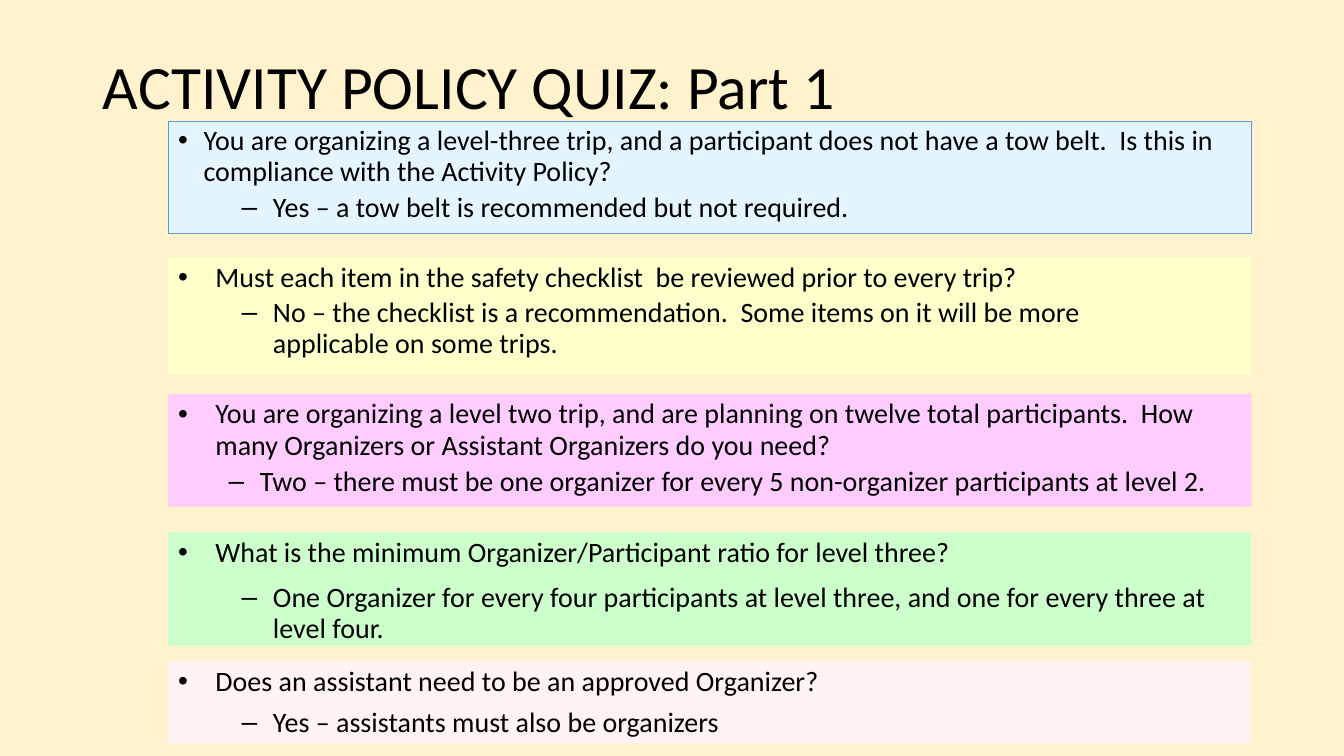
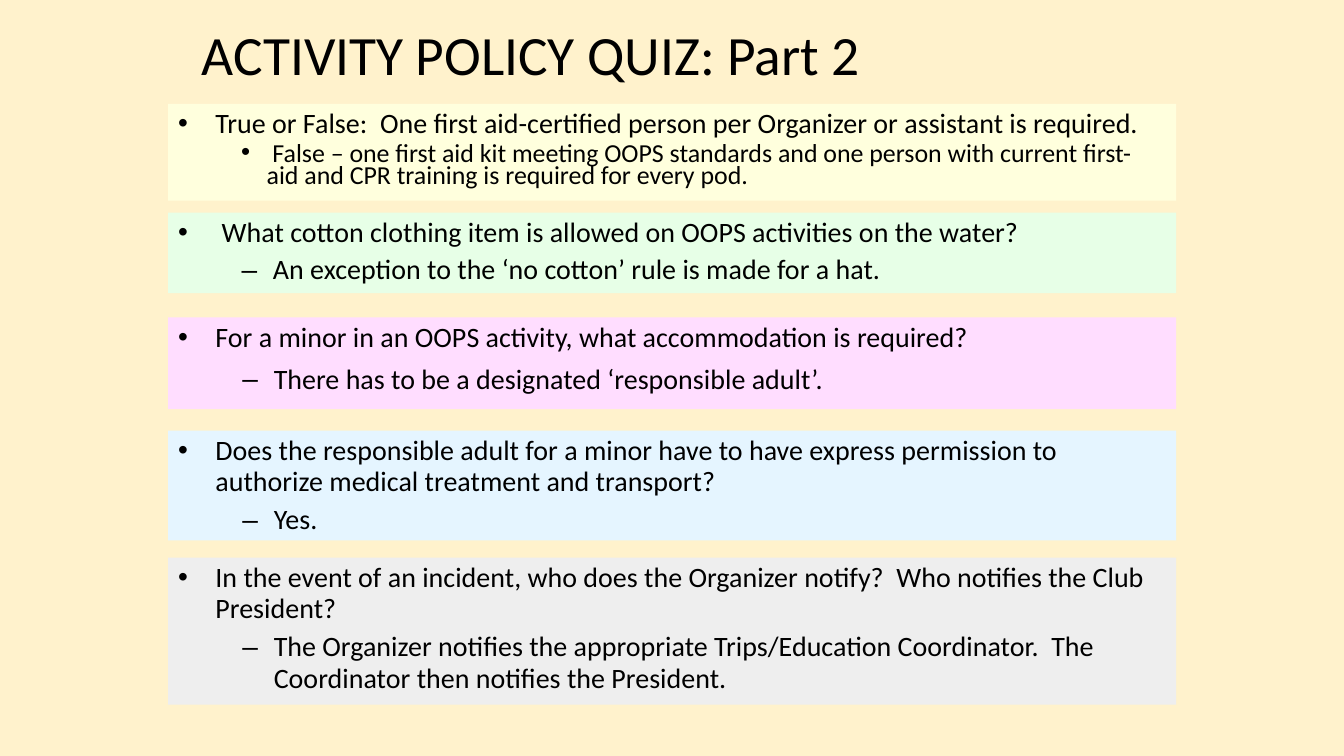
from dataclasses import dataclass
from typing import Optional

from lxml import etree
from pptx import Presentation
from pptx.dml.color import RGBColor
from pptx.enum.shapes import MSO_SHAPE
from pptx.enum.text import MSO_ANCHOR, MSO_AUTO_SIZE, PP_ALIGN
from pptx.oxml.ns import qn
from pptx.util import Cm, Pt

RECTANGLE = MSO_SHAPE.RECTANGLE
TOP, MIDDLE = MSO_ANCHOR.TOP, MSO_ANCHOR.MIDDLE
LEFT = PP_ALIGN.LEFT
NO_AUTOFIT = MSO_AUTO_SIZE.NONE
TITLE_ONLY = 5


@dataclass(frozen=True)
class TextStyle:
    """Paragraph look; margin and hang are in centimetres."""
    size: float = 20
    bullet: str = ""
    level: int = 0
    margin: float = 0
    hang: float = 0
    line: float = 0.93
    before: float = 0


@dataclass(frozen=True)
class Theme:
    """Colours, font and text styles shared by the slides."""
    font: str = "Calibri"
    bullet_font: str = "Arial"
    ink: str = "000000"
    page: str = "FFF2CC"
    outline: str = "5B9BD5"
    blue: str = "E5F5FF"
    yellow: str = "FFFFCC"
    pink: str = "FFCCFF"
    green: str = "CCFFCC"
    rose: str = "FFF3F3"
    pale_yellow: str = "FFFFDD"
    pale_green: str = "E7FFE7"
    pale_pink: str = "FFDDFF"
    grey: str = "EEEEEE"
    title: TextStyle = TextStyle(size=44, line=0.9)
    small_title: TextStyle = TextStyle(size=39.6, line=0.9)
    question: TextStyle = TextStyle(bullet="•", margin=0.94, hang=0.94, before=8)
    lead_question: TextStyle = TextStyle(bullet="•", margin=0.64, hang=0.64, line=0.9, before=10)
    answer: TextStyle = TextStyle(bullet="–", level=1, margin=2.06, hang=0.79, before=7)
    tight_answer: TextStyle = TextStyle(18.5, "•", 1, 1.9, 0.64, 0.7, 5)


THEME = Theme()


@dataclass(frozen=True)
class Card:
    """One question and its answer; the answer box is relative to the card."""
    top: float
    height: float
    fill: str
    question: str
    answer: str
    answer_box: tuple
    question_style: TextStyle = THEME.question
    answer_style: TextStyle = THEME.answer
    outline: Optional[str] = None


def color(value):
    """Turn a hex string into a colour."""
    return RGBColor.from_string(value)


def write_text(shape, text, style, anchor=TOP):
    """Write one styled paragraph into a shape."""
    frame = shape.text_frame
    frame.word_wrap = True
    frame.auto_size = NO_AUTOFIT
    frame.vertical_anchor = anchor
    para = frame.paragraphs[0]
    para.alignment = LEFT
    para.level = style.level
    para.line_spacing = style.line
    para.space_before = Pt(style.before)
    span = para.add_run()
    span.text = text
    span.font.name = THEME.font
    span.font.size = Pt(style.size)
    span.font.color.rgb = color(THEME.ink)
    if style.bullet:
        add_bullet(para, style)


def add_bullet(para, style):
    """Give a paragraph its bullet and hanging indent."""
    properties = para._p.get_or_add_pPr()
    properties.set("marL", str(Cm(style.margin)))
    properties.set("indent", str(-Cm(style.hang)))
    etree.SubElement(properties, qn("a:buFont")).set("typeface", THEME.bullet_font)
    etree.SubElement(properties, qn("a:buChar")).set("char", style.bullet)


def add_title(page, text, box, style):
    """Place and format the title placeholder."""
    title = page.shapes.title
    title.left, title.top, title.width, title.height = map(Cm, box)
    write_text(title, text, style, MIDDLE)


def add_card(page, left, width, card):
    """Draw a coloured question panel with its answer inside."""
    panel = page.shapes.add_shape(RECTANGLE, Cm(left), Cm(card.top), Cm(width), Cm(card.height))
    panel.shadow.inherit = False
    panel.fill.solid()
    panel.fill.fore_color.rgb = color(card.fill)
    if card.outline:
        panel.line.color.rgb = color(card.outline)
        panel.line.width = Pt(0.75)
    else:
        panel.line.fill.background()
    write_text(panel, card.question, card.question_style)
    across, down, answer_width, answer_height = card.answer_box
    answer = page.shapes.add_textbox(
        Cm(left + across), Cm(card.top + down), Cm(answer_width), Cm(answer_height))
    write_text(answer, card.answer, card.answer_style)


def add_quiz(deck, title, title_box, title_style, width, cards):
    """Add a quiz slide with a column of cards."""
    page = deck.slides.add_slide(deck.slide_layouts[TITLE_ONLY])
    add_title(page, title, title_box, title_style)
    for card in cards:
        add_card(page, 4.24, width, card)


PART_ONE = (
    Card(3.07, 2.82, THEME.blue,
         "You are organizing a level-three trip, and a participant does not have a tow belt.  "
         "Is this in compliance with the Activity Policy?",
         "Yes – a tow belt is recommended but not required.",
         (0.33, 1.65, 23.98, 1.27), question_style=THEME.lead_question, outline=THEME.outline),
    Card(6.48, 2.97, THEME.yellow,
         "Must each item in the safety checklist  be reviewed prior to every trip?",
         "No – the checklist is a recommendation.  Some items on it will be more applicable "
         "on some trips.",
         (0.33, 0.89, 24.77, 1.75)),
    Card(9.93, 2.84, THEME.pink,
         "You are organizing a level two trip, and are planning on twelve total participants.  "
         "How many Organizers or Assistant Organizers do you need?",
         "Two – there must be one organizer for every 5 non-organizer participants at level 2.",
         (0, 1.7, 27.05, 1.45)),
    Card(13.41, 2.87, THEME.green,
         "What is the minimum Organizer/Participant ratio for level three?",
         "One Organizer for every four participants at level three, and one for every three "
         "at level four.",
         (0.33, 1.14, 26.31, 1.42)),
    Card(16.66, 2.08, THEME.rose,
         "Does an assistant need to be an approved Organizer?",
         "Yes – assistants must also be organizers",
         (0.33, 1.04, 24.41, 1.07)),
)

PART_TWO = (
    Card(2.62, 2.44, THEME.pale_yellow,
         "True or False:  One first aid-certified person per Organizer or assistant is required.",
         " False – one first aid kit meeting OOPS standards and one person with current "
         "first-aid and CPR training is required for every pod.",
         (0.33, 0.91, 24.41, 1.45), answer_style=THEME.tight_answer),
    Card(5.36, 2.03, THEME.pale_green,
         " What cotton clothing item is allowed on OOPS activities on the water?",
         "An exception to the ‘no cotton’ rule is made for a hat.",
         (0.33, 0.94, 24.41, 1.45)),
    Card(8, 2.31, THEME.pale_pink,
         "For a minor in an OOPS activity, what accommodation is required?",
         "There has to be a designated ‘responsible adult’.",
         (0.35, 1.07, 24.41, 1.35)),
    Card(10.85, 2.77, THEME.blue,
         "Does the responsible adult for a minor have to have express permission to authorize "
         "medical treatment and transport?",
         "Yes.",
         (0.35, 1.75, 24.41, 1.12)),
    Card(14.05, 3.71, THEME.grey,
         "In the event of an incident, who does the Organizer notify?  Who notifies the Club "
         "President?",
         "The Organizer notifies the appropriate Trips/Education Coordinator.  The Coordinator "
         "then notifies the President.",
         (0.35, 1.75, 24.41, 2.01)),
)


def main():
    """Build and save the quiz deck."""
    deck = Presentation()
    deck.slide_width, deck.slide_height = Cm(33.87), Cm(19.05)
    background = deck.slide_master.background.fill
    background.solid()
    background.fore_color.rgb = color(THEME.page)
    add_quiz(deck, "ACTIVITY POLICY QUIZ: Part 1", (2.34, 1.02, 29.21, 2.49),
             THEME.title, 27.3, PART_ONE)
    add_quiz(deck, "ACTIVITY POLICY QUIZ: Part 2", (4.83, 0.51, 24.13, 1.88),
             THEME.small_title, 25.4, PART_TWO)
    deck.save("out.pptx")


if __name__ == "__main__":
    main()
